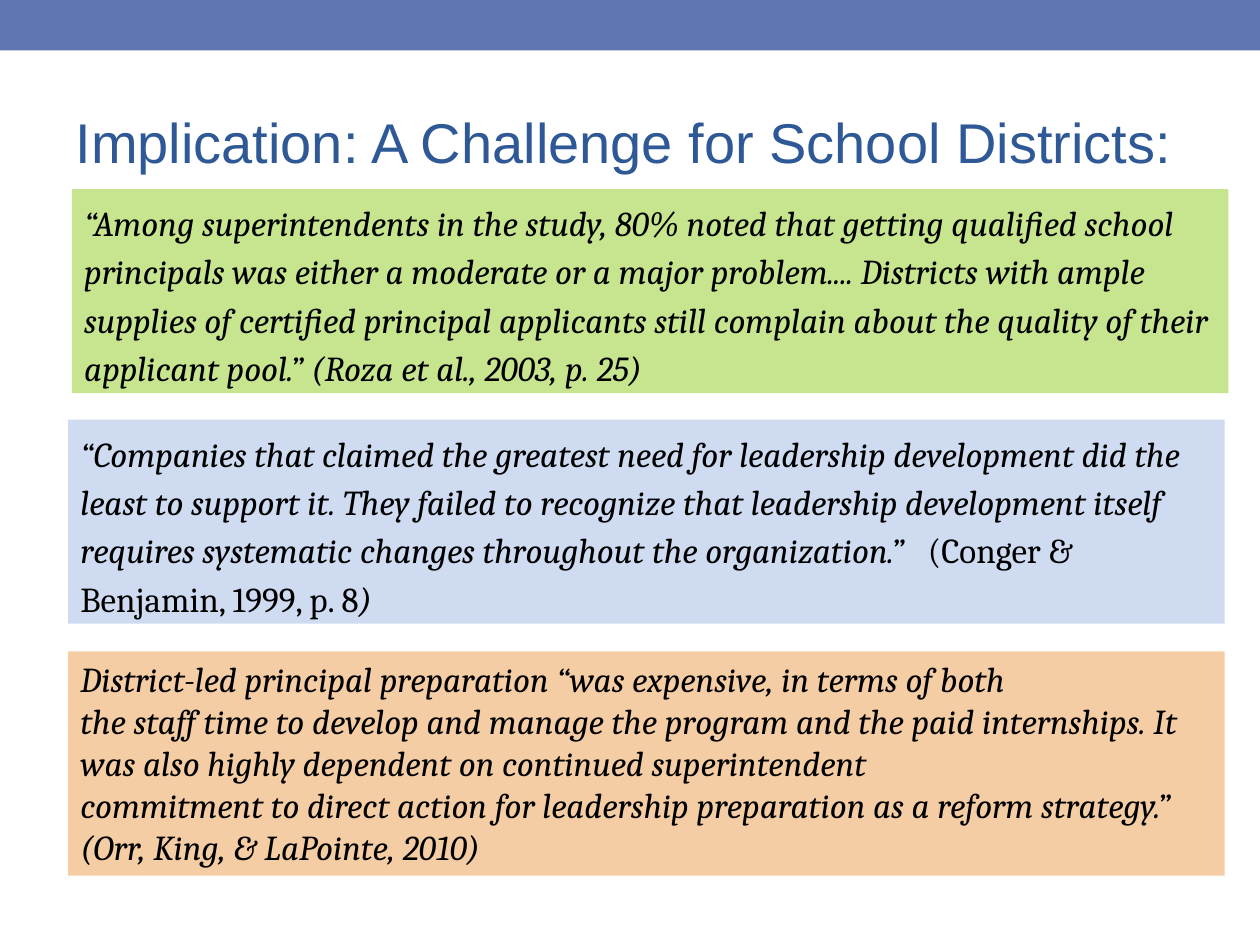
import pptx
import pptx.util
import pptx.dml.color
import pptx.enum.shapes
import pptx.enum.text

Inches = pptx.util.Inches
Pt = pptx.util.Pt

COLORS = {
    "banner": "6076B4",
    "title": "2F5897",
    "text": "000000",
    "green": "C6E58E",
    "blue": "CEDBF0",
    "orange": "F5CDA4",
}

# Each paragraph is a list of (text, italic) pieces.
SUPERINTENDENTS = [[(
    "“Among superintendents in the study, 80% noted that getting qualified school "
    "principals was either a moderate or a major problem.... Districts with ample "
    "supplies of certified principal applicants still complain about the quality of "
    "their applicant pool.” (Roza et al., 2003, p. 25)", True)]]

COMPANIES = [[
    ("“Companies that claimed the greatest need for leadership development did the "
     "least to support it. They failed to recognize that leadership development itself "
     "requires systematic changes throughout the organization.” ", True),
    ("  (Conger & Benjamin, 1999, p. 8", False),
    (")", True),
]]

PREPARATION = [
    [("District-led principal preparation “was expensive, in terms of both", True)],
    [("the staff time to develop and manage the program and the paid internships. It "
      "was also highly dependent on continued superintendent", True)],
    [("commitment to direct action for leadership preparation as a reform strategy.” "
      "(Orr, King, & LaPointe, 2010)", True)],
]


class QuoteSlide:
    title_font = "Arial"
    title_size = Pt(32)
    quote_font = "Cambria"
    quote_size = Pt(20)
    quote_width = 9.18

    def __init__(self, presentation):
        title_only = presentation.slide_layouts[5]
        self.slide = presentation.slides.add_slide(title_only)

    def color(self, name):
        return pptx.dml.color.RGBColor.from_string(COLORS[name])

    def format_font(self, font, name, size, color):
        font.name = name
        font.size = size
        font.color.rgb = self.color(color)

    def panel(self, left, top, width, height, fill):
        """Add a plain filled rectangle."""
        panel = self.slide.shapes.add_shape(
            pptx.enum.shapes.MSO_SHAPE.RECTANGLE,
            Inches(left), Inches(top), Inches(width), Inches(height))
        panel.shadow.inherit = False
        panel.fill.solid()
        panel.fill.fore_color.rgb = self.color(fill)
        panel.line.fill.background()
        return panel

    def title(self, text):
        title = self.slide.shapes.title
        title.left, title.top = Inches(0.5), Inches(0.58)
        title.width, title.height = Inches(9), Inches(1.08)
        frame = title.text_frame
        frame.text = text
        frame.auto_size = pptx.enum.text.MSO_AUTO_SIZE.NONE
        frame.vertical_anchor = pptx.enum.text.MSO_ANCHOR.MIDDLE
        paragraph = frame.paragraphs[0]
        paragraph.alignment = pptx.enum.text.PP_ALIGN.LEFT
        self.format_font(paragraph.runs[0].font, self.title_font, self.title_size, "title")

    def quote(self, left, top, height, fill, paragraphs, line_spacing=1.0):
        frame = self.panel(left, top, self.quote_width, height, fill).text_frame
        frame.word_wrap = True
        frame.vertical_anchor = pptx.enum.text.MSO_ANCHOR.TOP
        for index, pieces in enumerate(paragraphs):
            paragraph = frame.add_paragraph() if index else frame.paragraphs[0]
            paragraph.alignment = pptx.enum.text.PP_ALIGN.LEFT
            paragraph.line_spacing = line_spacing
            for text, italic in pieces:
                run = paragraph.add_run()
                run.text = text
                self.format_font(run.font, self.quote_font, self.quote_size, "text")
                run.font.italic = italic


def main():
    presentation = pptx.Presentation()
    presentation.slide_width = Inches(10)
    presentation.slide_height = Inches(7.5)

    page = QuoteSlide(presentation)
    page.panel(0, 0, 10, 0.4, "banner")
    page.title("Implication: A Challenge for School Districts:")
    page.quote(0.57, 1.5, 1.62, "green", SUPERINTENDENTS, line_spacing=1.15)
    page.quote(0.54, 3.33, 1.62, "blue", COMPANIES, line_spacing=1.15)
    page.quote(0.54, 5.17, 1.78, "orange", PREPARATION)

    presentation.save("out.pptx")


if __name__ == "__main__":
    main()
